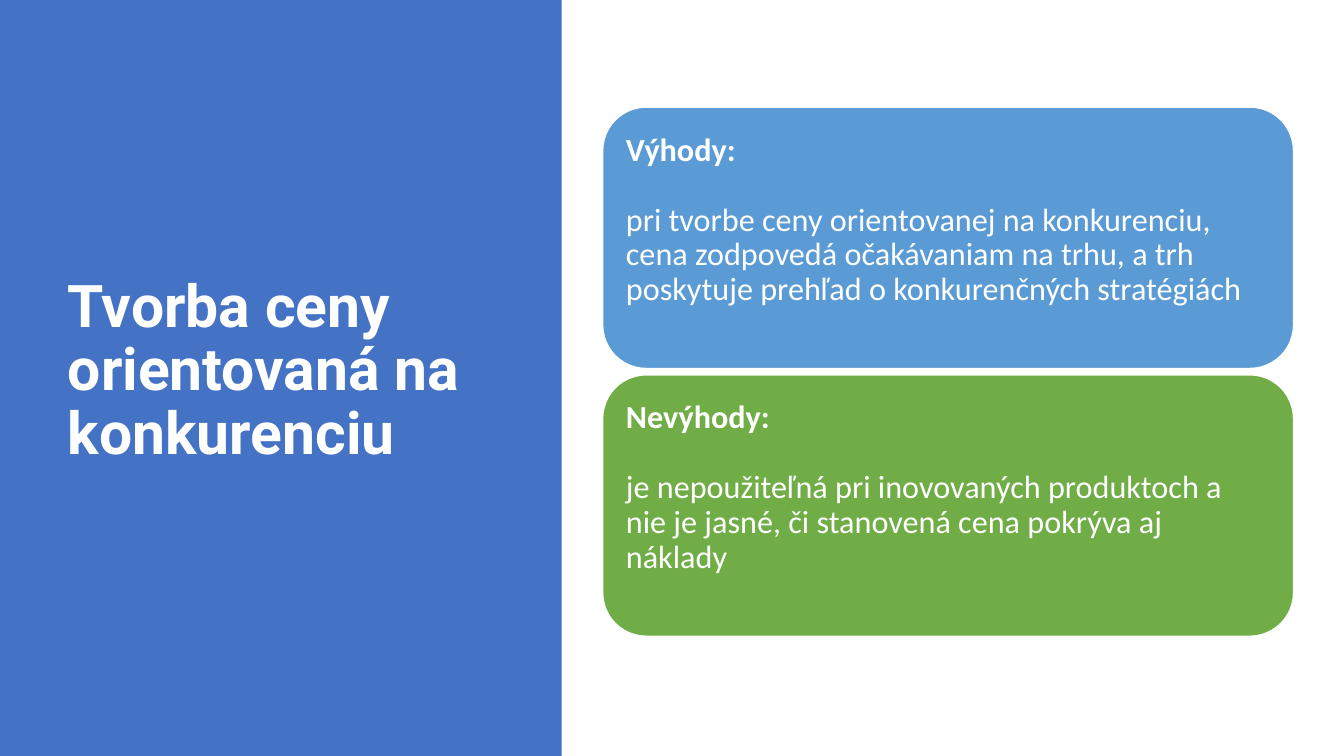
from dataclasses import dataclass

from pptx import Presentation
from pptx.dml.color import RGBColor
from pptx.enum.shapes import MSO_SHAPE
from pptx.enum.text import MSO_ANCHOR, PP_ALIGN
from pptx.shapes.autoshape import Shape
from pptx.slide import Slide
from pptx.text.text import _Paragraph
from pptx.util import Pt

PX = 9525
RECT, ROUND = MSO_SHAPE.RECTANGLE, MSO_SHAPE.ROUNDED_RECTANGLE
MIDDLE, LEFT = MSO_ANCHOR.MIDDLE, PP_ALIGN.LEFT
COLORS = {"panel": "4472C4", "pros": "5B9BD5", "cons": "70AD47", "white": "FFFFFF"}
CARD_X, CARD_Y, CARD_W, CARD_H, CARD_GAP = 574, 102, 658, 249, 6
PAD = 10
LINE_PT, LINE_PX = 25, 33


@dataclass
class Card:
    color: str
    head: str
    body: str


CARDS = [
    Card("pros", "Výhody:",
         "pri tvorbe ceny orientovanej na konkurenciu, cena zodpovedá "
         "očakávaniam na trhu, a trh poskytuje prehľad o konkurenčných stratégiách"),
    Card("cons", "Nevýhody:",
         "je nepoužiteľná pri inovovaných produktoch a nie je jasné, "
         "či stanovená cena pokrýva aj náklady"),
]


def rgb(name: str) -> RGBColor:
    return RGBColor.from_string(COLORS[name])


def add_box(slide: Slide, kind: MSO_SHAPE, color: str,
            x: int, y: int, w: int, h: int) -> Shape:
    box = slide.shapes.add_shape(kind, x * PX, y * PX, w * PX, h * PX)
    box.shadow.inherit = False
    box.fill.solid()
    box.fill.fore_color.rgb = rgb(color)
    box.line.fill.background()
    return box


def write(para: _Paragraph, text: str, font: str, size: int, bold: bool) -> None:
    para.alignment = LEFT
    para.line_spacing = 0.9
    run = para.add_run()
    run.text = text
    run.font.name = font
    run.font.size = Pt(size)
    run.font.bold = bold
    run.font.color.rgb = rgb("white")


def add_card(slide: Slide, card: Card, y: int) -> None:
    box = add_box(slide, ROUND, card.color, CARD_X, y, CARD_W, CARD_H)
    box.line.color.rgb = rgb("white")
    box.line.width = Pt(1)
    frame = box.text_frame
    frame.word_wrap = True
    frame.vertical_anchor = MIDDLE
    frame.margin_left = frame.margin_right = frame.margin_top = PAD * PX
    frame.margin_bottom = (PAD + LINE_PX) * PX
    head = frame.paragraphs[0]
    write(head, card.head, "Calibri", 23, True)
    head.space_after = Pt(LINE_PT)
    write(frame.add_paragraph(), card.body, "Calibri", 23, False)


def add_title(slide: Slide, text: str) -> None:
    title = slide.shapes.title
    title.left, title.top = 55 * PX, 65 * PX
    title.width, title.height = 399 * PX, 578 * PX
    frame = title.text_frame
    frame.word_wrap = True
    frame.vertical_anchor = MIDDLE
    write(frame.paragraphs[0], text, "Roboto", 42, True)


def main() -> None:
    deck = Presentation()
    deck.slide_width, deck.slide_height = 1280 * PX, 720 * PX
    slide = deck.slides.add_slide(deck.slide_layouts[5])
    panel = add_box(slide, RECT, "panel", 0, 0, 535, 720)
    slide.shapes.title.element.addprevious(panel.element)
    add_title(slide, "Tvorba ceny orientovaná na konkurenciu")
    for i, card in enumerate(CARDS):
        add_card(slide, card, CARD_Y + i * (CARD_H + CARD_GAP))
    deck.save("out.pptx")


if __name__ == "__main__":
    main()
